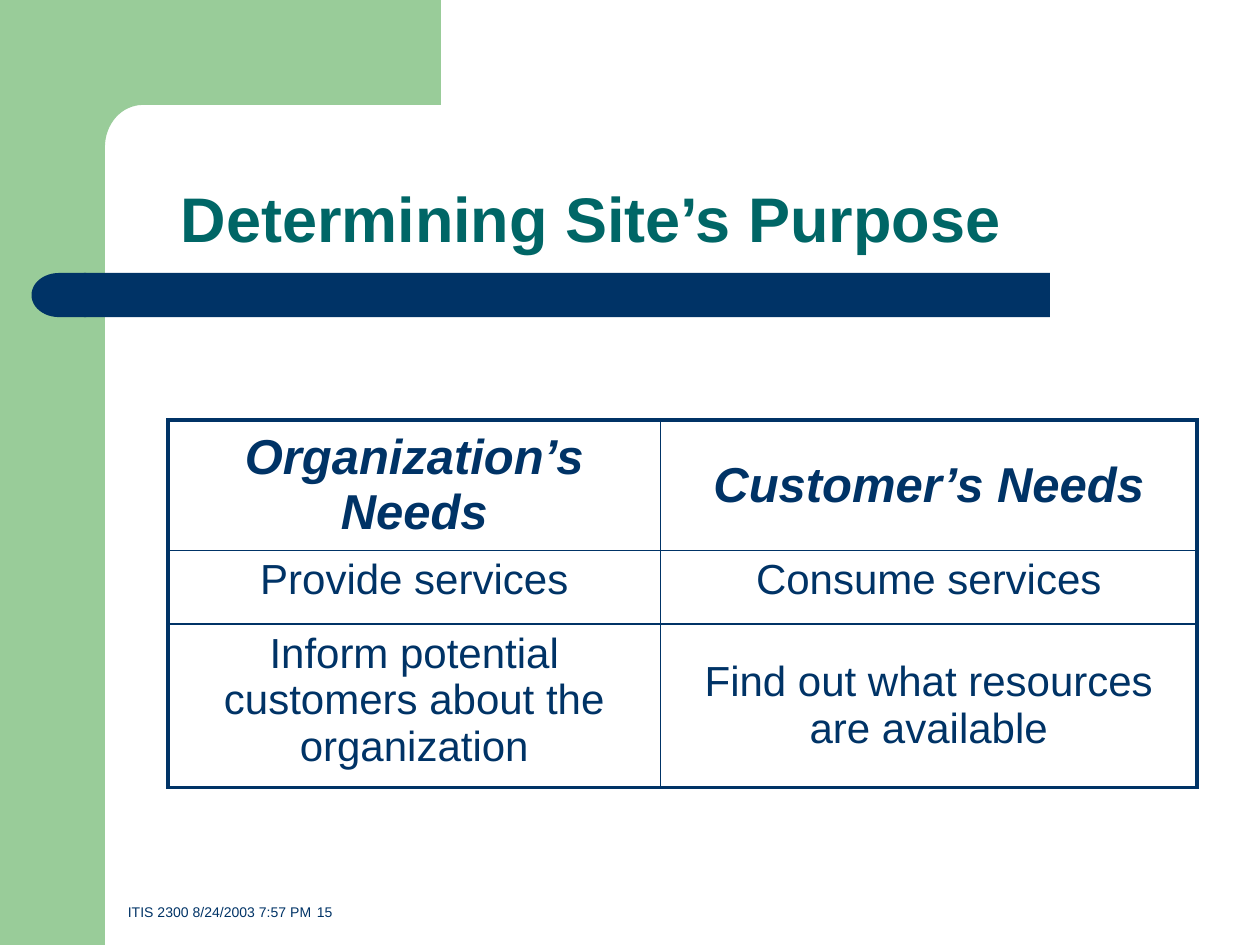
from dataclasses import dataclass
from math import cos, pi, sin

from lxml.etree import SubElement
from pptx import Presentation
from pptx.dml.color import RGBColor
from pptx.enum.shapes import MSO_SHAPE as Preset
from pptx.enum.text import MSO_ANCHOR as Anchor, MSO_AUTO_SIZE as AutoSize, PP_ALIGN as Align
from pptx.oxml.ns import qn
from pptx.util import Emu, Inches, Pt


@dataclass(frozen=True)
class Theme:
    font: str = "Arial"
    navy: str = "003366"
    teal: str = "006666"
    green: str = "99CC99"
    title: int = 36
    heading: int = 28
    body: int = 24
    footer: int = 8
    frame: float = 2.25
    rule: float = 1


@dataclass(frozen=True)
class Box:
    """A place on a grid of 120 columns by 90 rows."""
    col: float
    row: float
    cols: float
    rows: float

    def emu(self) -> tuple[Emu, ...]:
        return tuple(grid(n) for n in (self.col, self.row, self.cols, self.rows))


@dataclass(frozen=True)
class Block:
    preset: Preset
    box: Box
    color: str
    mirrored: bool = False


@dataclass(frozen=True)
class Need:
    text: str
    anchor: Anchor
    heading: bool = False


THEME = Theme()
BLOCKS = [
    Block(Preset.RECTANGLE, Box(0, 0, 10, 90), THEME.green),
    Block(Preset.RECTANGLE, Box(8, 26, 92, 4.2), THEME.navy),
    Block(Preset.FLOWCHART_DELAY, Box(3, 26, 5.2, 4.2), THEME.navy, mirrored=True),
]
TITLE_BOX = Box(16, 10, 104, 15)
FOOTER_BOX = Box(11, 82, 103, 6.2)
TABLE_BOX = Box(16, 40, 98, 35)
COLUMN_WIDTHS = (46.9, 51.1)
ROW_HEIGHTS = (7, 7, 14)
NEEDS = [
    [Need("Organization’s Needs", Anchor.MIDDLE, True),
     Need("Customer’s Needs", Anchor.MIDDLE, True)],
    [Need("Provide services", Anchor.TOP),
     Need("Consume services", Anchor.TOP)],
    [Need("Inform potential customers about the organization", Anchor.TOP),
     Need("Find out what resources are available", Anchor.MIDDLE)],
]


def grid(units: float) -> Emu:
    return Inches(units / 12)


def paint(shape, color: str) -> None:
    shape.shadow.inherit = False
    shape.fill.solid()
    shape.fill.fore_color.rgb = RGBColor.from_string(color)
    shape.line.fill.background()


def write(frame, text: str, color: str, size: int, align=Align.LEFT, **style) -> None:
    frame.text = text
    paragraph = frame.paragraphs[0]
    paragraph.alignment = align
    font = paragraph.runs[0].font
    font.color.rgb = RGBColor.from_string(color)
    for name, value in {"name": THEME.font, "size": Pt(size), **style}.items():
        setattr(font, name, value)


def draw_block(slide, block: Block) -> None:
    shape = slide.shapes.add_shape(block.preset, *block.box.emu())
    paint(shape, block.color)
    if block.mirrored:
        shape._element.spPr.find(qn("a:xfrm")).set("flipH", "1")


def draw_corner(slide, steps: int = 16) -> None:
    """Top band whose inner corner is a quarter ellipse."""
    center_x, center_y, radius_x, radius_y = 13.6, 14, 3.6, 4
    angles = [pi / 2 * step / steps for step in range(steps + 1)]
    curve = [(center_x - radius_x * sin(a), center_y - radius_y * cos(a)) for a in angles]
    outline = [(42, 0), (42, 10), *curve, (10, 15.4), (6, 15.4), (6, 0)]
    points = [(grid(x), grid(y)) for x, y in outline]
    builder = slide.shapes.build_freeform(*points[0])
    builder.add_line_segments(points[1:], close=True)
    paint(builder.convert_to_shape(), THEME.green)


def set_title(slide) -> None:
    title = slide.shapes.title
    title.left, title.top, title.width, title.height = TITLE_BOX.emu()
    frame = title.text_frame
    write(frame, "Determining Site’s Purpose", THEME.teal, THEME.title, bold=True)
    frame.paragraphs[0].line_spacing = 0.9
    settings = {"vertical_anchor": Anchor.BOTTOM, "auto_size": AutoSize.NONE, "word_wrap": True}
    for name, value in settings.items():
        setattr(frame, name, value)


def draw_footer(slide) -> None:
    frame = slide.shapes.add_textbox(*FOOTER_BOX.emu()).text_frame
    frame.word_wrap = True
    frame.vertical_anchor = Anchor.BOTTOM
    write(frame, "ITIS 2300 8/24/2003 7:57 PM\t15", THEME.navy, THEME.footer)


def set_borders(cell, outer: dict[str, bool]) -> None:
    """Outer sides get the frame width, inner sides the rule width."""
    properties = cell._tc.get_or_add_tcPr()
    for place, (side, is_outer) in enumerate(outer.items()):
        width = THEME.frame if is_outer else THEME.rule
        line = SubElement(properties, qn(f"a:ln{side}"), w=str(Pt(width)))
        fill = SubElement(line, qn("a:solidFill"))
        SubElement(fill, qn("a:srgbClr"), val=THEME.navy)
        properties.insert(place, line)


def draw_needs(slide) -> None:
    row_count, column_count = len(NEEDS), len(NEEDS[0])
    holder = slide.shapes.add_table(row_count, column_count, *TABLE_BOX.emu())
    table = holder.table
    table.first_row = table.horz_banding = False
    for column, width in zip(table.columns, COLUMN_WIDTHS):
        column.width = grid(width)
    for row, height in zip(table.rows, ROW_HEIGHTS):
        row.height = grid(height)
    holder.height = grid(TABLE_BOX.rows)
    for r, needs in enumerate(NEEDS):
        for c, need in enumerate(needs):
            cell = table.cell(r, c)
            cell.fill.background()
            cell.vertical_anchor = need.anchor
            size = THEME.heading if need.heading else THEME.body
            write(cell.text_frame, need.text, THEME.navy, size, Align.CENTER,
                  bold=need.heading, italic=need.heading)
            set_borders(cell, {"L": c == 0, "R": c == column_count - 1,
                               "T": r == 0, "B": r == row_count - 1})


def main() -> None:
    deck = Presentation()
    deck.slide_width, deck.slide_height = grid(120), grid(90)
    slide = deck.slides.add_slide(deck.slide_layouts[5])
    draw_corner(slide)
    for block in BLOCKS:
        draw_block(slide, block)
    draw_footer(slide)
    set_title(slide)
    draw_needs(slide)
    deck.save("out.pptx")


if __name__ == "__main__":
    main()
